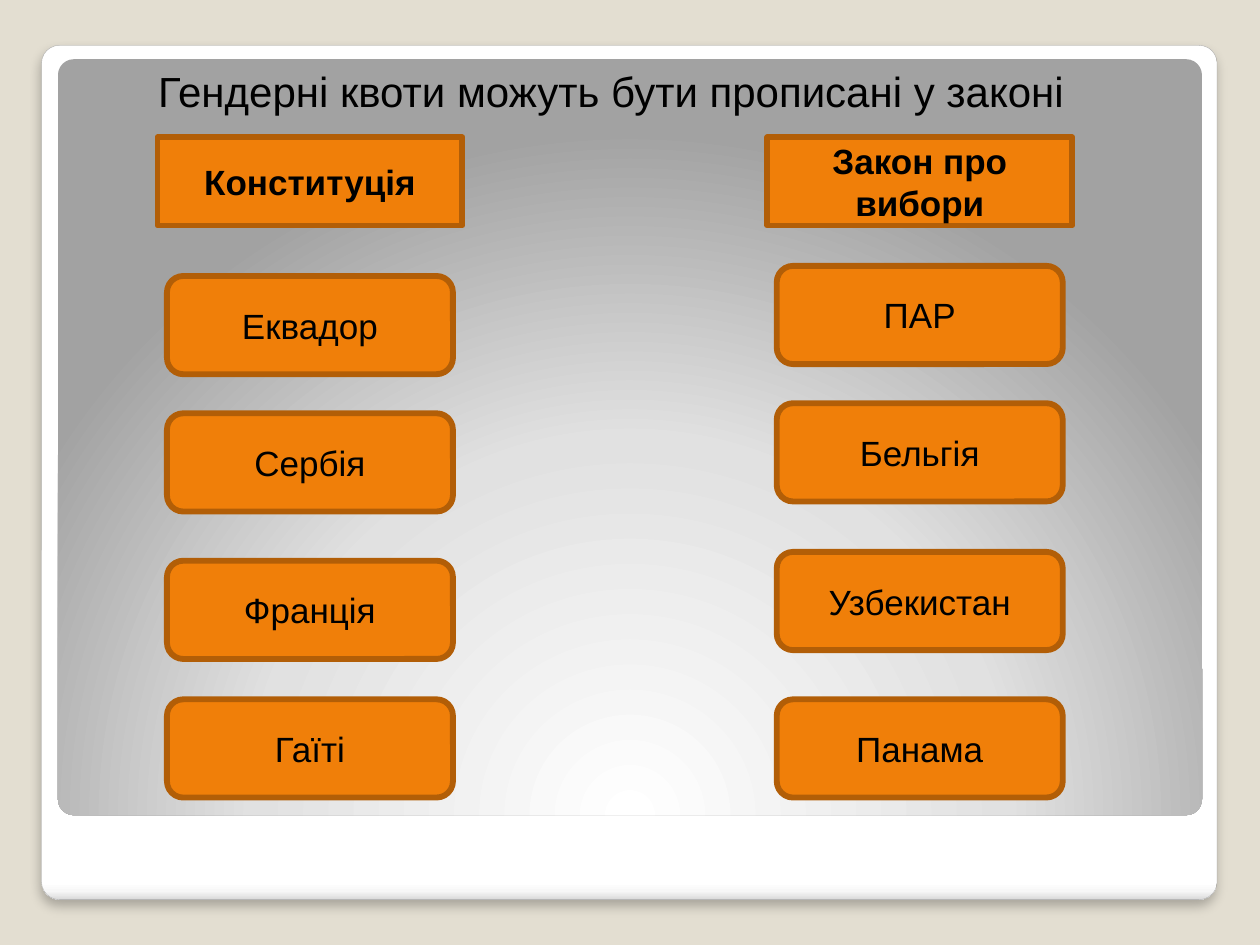
import pptx
import pptx.dml.color
import pptx.enum.shapes
import pptx.enum.text
import pptx.oxml
import pptx.oxml.ns
import pptx.util
from pptx.util import Inches

RGBColor = pptx.dml.color.RGBColor
MSO_SHAPE = pptx.enum.shapes.MSO_SHAPE
MSO_ANCHOR = pptx.enum.text.MSO_ANCHOR

BACKGROUND = RGBColor(0xE3, 0xDE, 0xD1)
FRAME_LINE = RGBColor(0xA4, 0xA4, 0xA4)
ORANGE = RGBColor(0xF0, 0x7F, 0x09)
DARK_ORANGE = RGBColor(0xB2, 0x5E, 0x07)
BLACK = RGBColor(0, 0, 0)
WHITE = RGBColor(0xFF, 0xFF, 0xFF)
FRAME_STOPS = [(0, WHITE), (98, WHITE), (99, RGBColor(0xF7, 0xF7, 0xF7)),
               (100, RGBColor(0xDA, 0xDA, 0xDA))]
PANEL_STOPS = [(0, WHITE), (55, RGBColor(0xE1, 0xE1, 0xE1)),
               (100, RGBColor(0xA2, 0xA2, 0xA2))]
DOWNWARD = '<a:lin ang="5400000" scaled="0"/>'
FROM_BELOW = ('<a:path path="circle"><a:fillToRect l="50000" t="175000" '
              'r="50000" b="-75000"/></a:path>')

# Column centre, heading, and (top, country) for each box
COLUMNS = [
    (2.46, "Конституція",
     [(2.19, "Еквадор"), (3.28, "Сербія"), (4.45, "Франція"), (5.55, "Гаїті")]),
    (7.3, "Закон про вибори",
     [(2.11, "ПАР"), (3.2, "Бельгія"), (4.38, "Узбекистан"), (5.55, "Панама")]),
]


def set_gradient(sp, stops, direction):
    """Fill with (percent, colour) stops along an a:lin or a:path element."""
    gs = "".join(f'<a:gs pos="{pos * 1000}"><a:srgbClr val="{color}"/></a:gs>'
                 for pos, color in stops)
    grad = pptx.oxml.parse_xml(
        f'<a:gradFill {pptx.oxml.ns.nsdecls("a")} rotWithShape="1">'
        f'<a:gsLst>{gs}</a:gsLst>{direction}</a:gradFill>')
    sp.fill.background()
    no_fill = sp.element.spPr.find(pptx.oxml.ns.qn("a:noFill"))
    no_fill.getparent().replace(no_fill, grad)


def add_shadow(sp):
    effects = sp.element.spPr.find(pptx.oxml.ns.qn("a:effectLst"))
    effects.append(pptx.oxml.parse_xml(
        f'<a:outerShdw {pptx.oxml.ns.nsdecls("a")} blurRad="76200" dist="50800" '
        'dir="5400000" algn="tl" rotWithShape="0"><a:srgbClr val="000000">'
        '<a:alpha val="25000"/></a:srgbClr></a:outerShdw>'))


def add_panel(slide, left, top, width, height, stops, direction):
    sp = slide.shapes.add_shape(MSO_SHAPE.ROUNDED_RECTANGLE, Inches(left),
                                Inches(top), Inches(width), Inches(height))
    sp.adjustments[0] = 0.021
    sp.shadow.inherit = False
    sp.line.fill.background()
    set_gradient(sp, stops, direction)
    return sp


def write_text(tf, text, size, anchor, bold=False):
    tf.word_wrap = True
    tf.vertical_anchor = anchor
    p = tf.paragraphs[0]
    p.text = text
    p.alignment = pptx.enum.text.PP_ALIGN.CENTER
    p.font.name = "Arial"
    p.font.size = pptx.util.Pt(size)
    p.font.bold = bold
    p.font.color.rgb = BLACK


def set_title(slide, text):
    title = slide.shapes.title
    title.left, title.top = Inches(1.02), Inches(0.47)
    title.width, title.height = Inches(7.66), Inches(0.5)
    write_text(title.text_frame, text, 24, MSO_ANCHOR.TOP)
    title.text_frame.auto_size = pptx.enum.text.MSO_AUTO_SIZE.SHAPE_TO_FIT_TEXT
    # Bring the title in front of the panels
    title.element.getparent().append(title.element)


def add_box(slide, shape, center, top, width, height, text, bold=False):
    sp = slide.shapes.add_shape(shape, Inches(center - width / 2), Inches(top),
                                Inches(width), Inches(height))
    sp.shadow.inherit = False
    sp.fill.solid()
    sp.fill.fore_color.rgb = ORANGE
    sp.line.color.rgb = DARK_ORANGE
    sp.line.width = pptx.util.Pt(3.35)
    write_text(sp.text_frame, text, 20, MSO_ANCHOR.MIDDLE, bold)


def add_column(slide, center, heading, countries):
    add_box(slide, MSO_SHAPE.RECTANGLE, center, 1.09, 2.42, 0.7, heading, True)
    for top, country in countries:
        add_box(slide, MSO_SHAPE.ROUNDED_RECTANGLE, center, top, 2.27, 0.78, country)


def main():
    prs = pptx.Presentation()
    prs.slide_width, prs.slide_height = Inches(10), Inches(7.5)
    slide = prs.slides.add_slide(prs.slide_layouts[5])
    slide.background.fill.solid()
    slide.background.fill.fore_color.rgb = BACKGROUND

    frame = add_panel(slide, 0.33, 0.36, 9.33, 6.78, FRAME_STOPS, DOWNWARD)
    frame.line.color.rgb = FRAME_LINE
    frame.line.width = pptx.util.Pt(0.16)
    add_shadow(frame)
    add_panel(slide, 0.46, 0.47, 9.08, 6, PANEL_STOPS, FROM_BELOW)

    set_title(slide, "Гендерні квоти можуть бути прописані у законі")
    for center, heading, countries in COLUMNS:
        add_column(slide, center, heading, countries)
    prs.save("out.pptx")


if __name__ == "__main__":
    main()
